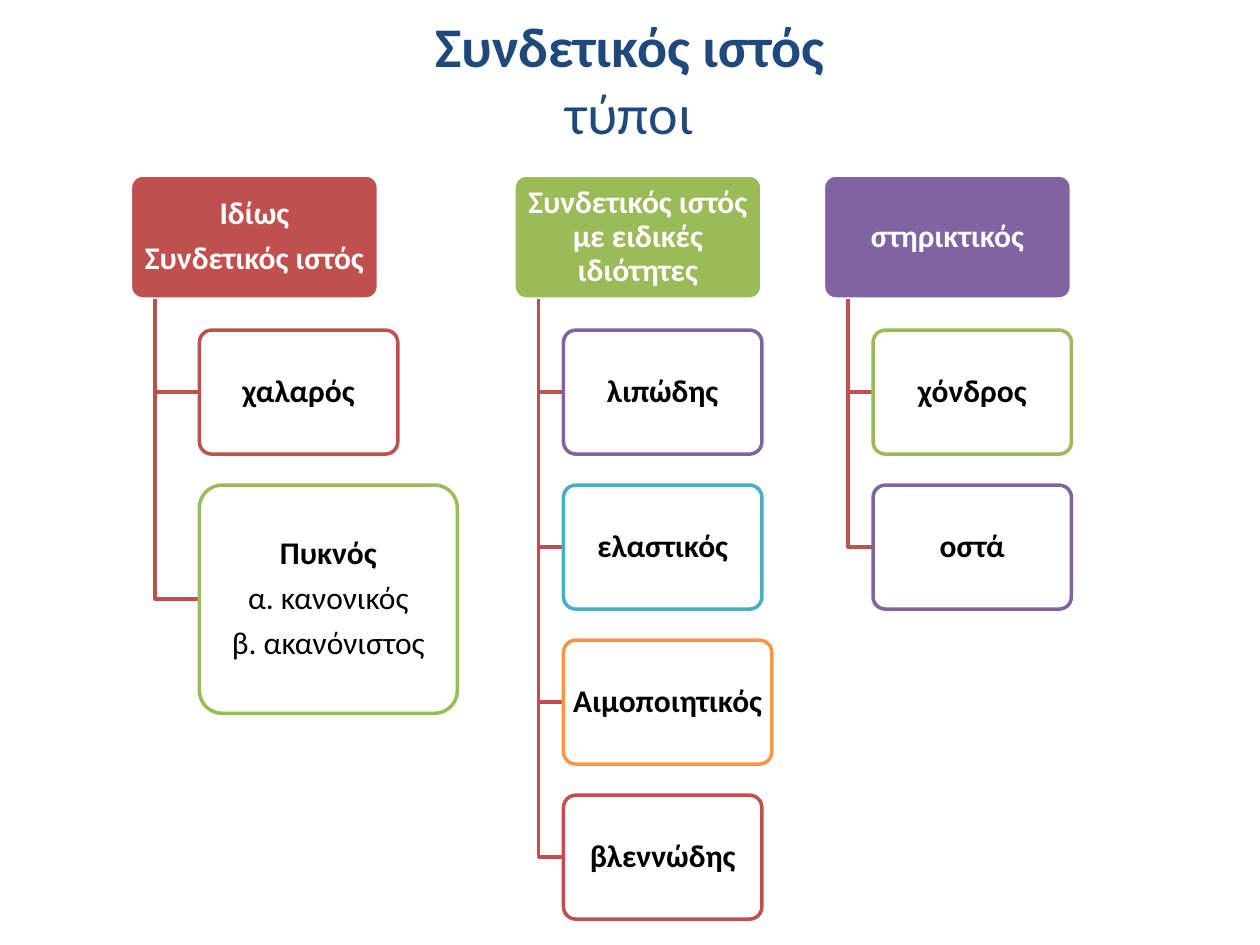
from dataclasses import dataclass

from lxml import etree
from pptx import Presentation
from pptx import util as u
from pptx.dml.color import RGBColor
from pptx.enum import shapes, text
from pptx.oxml.ns import qn

COLORS = {
    "red": "C0504D",
    "green": "9BBB59",
    "purple": "8064A2",
    "aqua": "4BACC6",
    "orange": "F79646",
    "navy": "1F497D",
    "white": "FFFFFF",
    "black": "000000",
}
FONT = "Calibri"
HEADER_TOP = 3.53
HEADER_WIDTH = 5.0
BOX_HEIGHT = 2.5
GAP = BOX_HEIGHT / 4
TRUNK_OFFSET = 0.5


@dataclass(frozen=True)
class Line:
    words: str
    bold: bool = True


@dataclass(frozen=True)
class Box:
    lines: tuple[Line, ...]
    color: str
    width: float = 4.0
    height: float = BOX_HEIGHT


@dataclass(frozen=True)
class Branch:
    left: float
    indent: float
    header: Box
    children: tuple[Box, ...]


def header(color: str, *words: str) -> Box:
    return Box(tuple(Line(word) for word in words), color, HEADER_WIDTH)


BRANCHES = (
    Branch(2.63, 1.39, header("red", "Ιδίως", "Συνδετικός ιστός"), (
        Box((Line("χαλαρός"),), "red"),
        Box((Line("Πυκνός"), Line("α. κανονικός", False), Line("β. ακανόνιστος", False)),
            "green", 5.2, 4.6),
    )),
    Branch(10.36, 1.0, header("green", "Συνδετικός ιστός με ειδικές ιδιότητες"), (
        Box((Line("λιπώδης"),), "purple"),
        Box((Line("ελαστικός"),), "aqua"),
        Box((Line("Αιμοποιητικός"),), "orange", 4.2),
        Box((Line("βλεννώδης"),), "red"),
    )),
    Branch(16.6, 1.0, header("purple", "στηρικτικός"), (
        Box((Line("χόνδρος"),), "green"),
        Box((Line("οστά"),), "purple"),
    )),
)


def rgb(name: str) -> RGBColor:
    return RGBColor.from_string(COLORS[name])


def add_run(paragraph, words: str, size: float, color: str, bold: bool) -> None:
    run = paragraph.add_run()
    run.text = words
    run.font.name = FONT
    run.font.size = u.Pt(size)
    run.font.bold = bold
    run.font.color.rgb = rgb(color)


def set_outline(shape, color: str) -> None:
    shape.shadow.inherit = False
    shape.line.color.rgb = rgb(color)
    shape.line.width = u.Pt(2)


def draw_box(slide, box: Box, left: float, top: float, fill: str, outline: str, ink: str):
    shape = slide.shapes.add_shape(
        shapes.MSO_SHAPE.ROUNDED_RECTANGLE,
        u.Cm(left), u.Cm(top), u.Cm(box.width), u.Cm(box.height))
    shape.adjustments[0] = 0.1
    shape.fill.solid()
    shape.fill.fore_color.rgb = rgb(fill)
    set_outline(shape, outline)
    frame = shape.text_frame
    frame.word_wrap = True
    frame.vertical_anchor = text.MSO_ANCHOR.MIDDLE
    frame.margin_left = frame.margin_right = u.Cm(0.09)
    frame.margin_top = frame.margin_bottom = u.Cm(0.06)
    for index, line in enumerate(box.lines):
        paragraph = frame.add_paragraph() if index else frame.paragraphs[0]
        paragraph.alignment = text.PP_ALIGN.CENTER
        paragraph.line_spacing = 0.9
        paragraph.space_after = u.Pt(6.3)
        add_run(paragraph, line.words, 18, ink, line.bold)
    return shape


def draw_elbow(slide, trunk: float, top: float, right: float, bottom: float) -> None:
    builder = slide.shapes.build_freeform(u.Cm(trunk), u.Cm(top))
    builder.add_line_segments(
        [(u.Cm(trunk), u.Cm(bottom)), (u.Cm(right), u.Cm(bottom))], close=False)
    elbow = builder.convert_to_shape()
    elbow.fill.background()
    set_outline(elbow, "red")


def draw_branch(slide, branch: Branch) -> None:
    draw_box(slide, branch.header, branch.left, HEADER_TOP,
             branch.header.color, "white", "white")
    header_bottom = HEADER_TOP + BOX_HEIGHT
    child_left = branch.left + branch.indent
    top = header_bottom + GAP
    for child in branch.children:
        draw_elbow(slide, branch.left + TRUNK_OFFSET, header_bottom,
                   child_left, top + child.height / 2)
        shape = draw_box(slide, child, child_left, top, "white", child.color, "black")
        fill_color = shape._element.spPr.find(qn("a:solidFill"))[0]
        etree.SubElement(fill_color, qn("a:alpha"), val="90000")
        top += child.height + GAP


def draw_title(slide) -> None:
    title = slide.shapes.title
    title.left, title.top = u.Cm(1.27), u.Cm(0)
    title.width, title.height = u.Cm(22.86), u.Cm(3.18)
    title.text_frame.vertical_anchor = text.MSO_ANCHOR.MIDDLE
    paragraph = title.text_frame.paragraphs[0]
    paragraph.alignment = text.PP_ALIGN.CENTER
    add_run(paragraph, "Συνδετικός ιστός", 32, "navy", True)
    paragraph.add_line_break()
    etree.SubElement(paragraph._p[-1], qn("a:rPr"), sz="3200")
    add_run(paragraph, "τύποι", 32, "navy", False)


def main() -> None:
    presentation = Presentation()
    presentation.slide_width = u.Cm(25.4)
    presentation.slide_height = u.Cm(19.05)
    slide = presentation.slides.add_slide(presentation.slide_layouts[5])
    draw_title(slide)
    for branch in BRANCHES:
        draw_branch(slide, branch)
    presentation.save("out.pptx")


if __name__ == "__main__":
    main()
